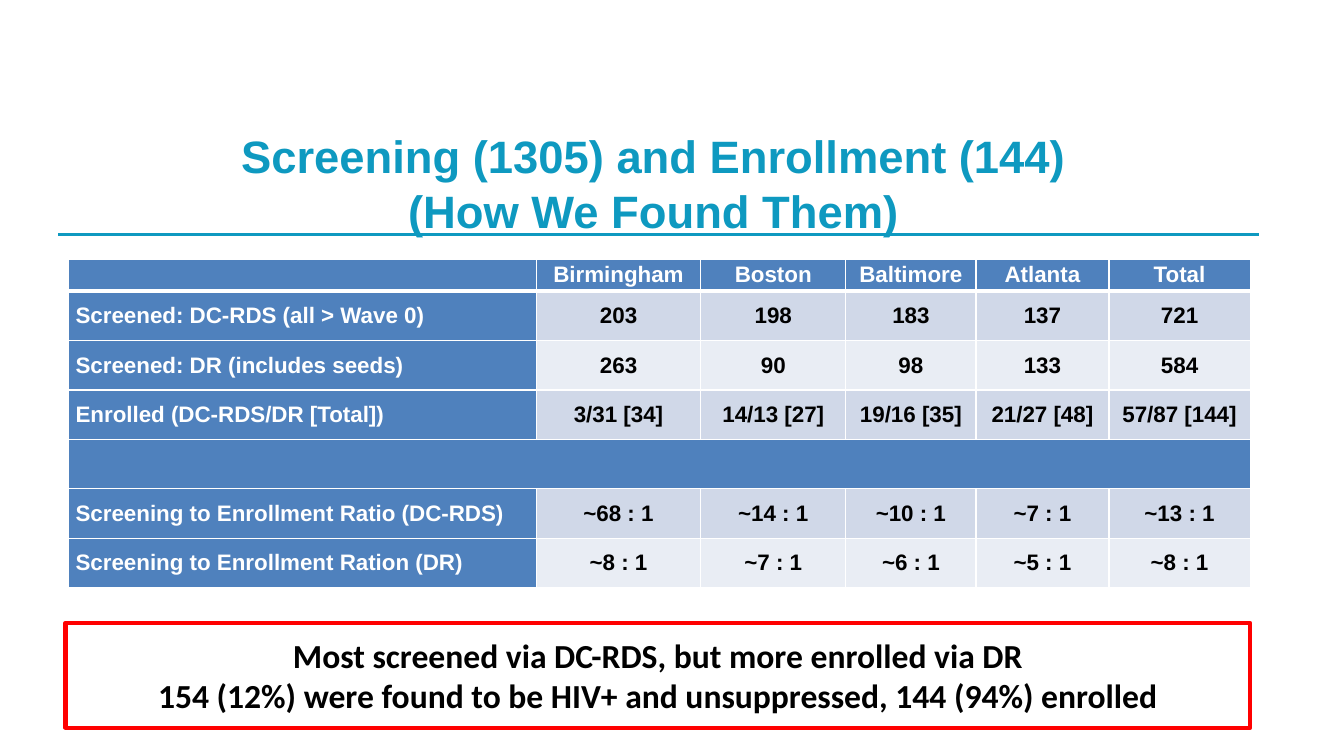
from lxml.etree import SubElement
from pptx import Presentation
from pptx.dml.color import RGBColor
from pptx.enum.shapes import MSO_CONNECTOR, MSO_SHAPE
from pptx.enum.text import MSO_ANCHOR, PP_ALIGN
from pptx.oxml.ns import qn
from pptx.util import Inches, Pt

TEAL, BLUE, WHITE, BLACK, RED = "0E99C0", "4F81BD", "FFFFFF", "000000", "FF0000"
BANDS = ("E9EDF4", "D0D8E8")

COLUMN_WIDTHS = [4.64, 1.63, 1.44, 1.29, 1.32, 1.4]
ROW_HEIGHTS = [0.32] + [0.49] * 6
SPACER_ROW = 4
SCREENING = [
    ["", "Birmingham", "Boston", "Baltimore", "Atlanta", "Total"],
    ["Screened: DC-RDS (all > Wave 0)", "203", "198", "183", "137", "721"],
    ["Screened: DR (includes seeds)", "263", "90", "98", "133", "584"],
    ["Enrolled (DC-RDS/DR [Total])", "3/31 [34]", "14/13 [27]", "19/16 [35]",
     "21/27 [48]", "57/87 [144]"],
    [""] * 6,
    ["Screening to Enrollment Ratio (DC-RDS)", "~68 : 1", "~14 : 1", "~10 : 1",
     "~7 : 1", "~13 : 1"],
    ["Screening to Enrollment Ration (DR)", "~8 : 1", "~7 : 1", "~6 : 1",
     "~5 : 1", "~8 : 1"],
]


def color(value):
    return RGBColor.from_string(value)


class SlideBuilder:
    def __init__(self, page, font="Arial"):
        self.page = page
        self.font = font

    def set_text(self, para, text, size, ink, align=PP_ALIGN.CENTER, font=None):
        para.text = text
        para.alignment = align
        para.font.name = font or self.font
        para.font.size = Pt(size)
        para.font.bold = True
        para.font.color.rgb = color(ink)

    def title(self, text, left, top, width, height):
        box = self.page.shapes.add_textbox(
            Inches(left), Inches(top), Inches(width), Inches(height))
        frame = box.text_frame
        frame.word_wrap = True
        frame.vertical_anchor = MSO_ANCHOR.MIDDLE
        frame.margin_top = frame.margin_bottom = 0
        self.set_text(frame.paragraphs[0], text, 32.4, TEAL)

    def rule(self, left, right, y):
        line = self.page.shapes.add_connector(
            MSO_CONNECTOR.STRAIGHT, Inches(left), Inches(y), Inches(right), Inches(y))
        line.line.color.rgb = color(TEAL)
        line.line.width = Pt(2)
        SubElement(line._element.spPr, qn("a:effectLst"))

    def borders(self, cell, top, bottom):
        properties = cell._tc.get_or_add_tcPr()
        for side, width in (("L", 1), ("R", 1), ("T", top), ("B", bottom)):
            edge = SubElement(properties, qn(f"a:ln{side}"), w=str(Pt(width)))
            fill = SubElement(edge, qn("a:solidFill"))
            SubElement(fill, qn("a:srgbClr"), val=WHITE)

    def table(self, rows, left, top):
        grid = self.page.shapes.add_table(
            len(rows), len(COLUMN_WIDTHS), Inches(left), Inches(top),
            Inches(sum(COLUMN_WIDTHS)), Inches(sum(ROW_HEIGHTS))).table
        for column, width in zip(grid.columns, COLUMN_WIDTHS):
            column.width = Inches(width)
        for row, height in zip(grid.rows, ROW_HEIGHTS):
            row.height = Inches(height)
        for r, texts in enumerate(rows):
            for c, text in enumerate(texts):
                cell = grid.cell(r, c)
                heading = r in (0, SPACER_ROW) or c == 0
                cell.margin_left = cell.margin_right = Inches(0.07)
                cell.margin_top = cell.margin_bottom = 0
                cell.vertical_anchor = MSO_ANCHOR.MIDDLE
                self.borders(cell, 3 if r == 1 else 1, 3 if r == 0 else 1)
                cell.fill.solid()
                cell.fill.fore_color.rgb = color(BLUE if heading else BANDS[r % 2])
                self.set_text(cell.text_frame.paragraphs[0], text, 16,
                              WHITE if heading else BLACK,
                              PP_ALIGN.LEFT if c == 0 else PP_ALIGN.CENTER)
        grid.cell(SPACER_ROW, 0).merge(grid.cell(SPACER_ROW, len(COLUMN_WIDTHS) - 1))

    def callout(self, lines, left, top, width, height):
        box = self.page.shapes.add_shape(
            MSO_SHAPE.RECTANGLE, Inches(left), Inches(top), Inches(width), Inches(height))
        box.shadow.inherit = False
        box.fill.solid()
        box.fill.fore_color.rgb = color(WHITE)
        box.line.color.rgb = color(RED)
        box.line.width = Pt(3)
        frame = box.text_frame
        frame.word_wrap = True
        frame.vertical_anchor = MSO_ANCHOR.MIDDLE
        for i, text in enumerate(lines):
            para = frame.add_paragraph() if i else frame.paragraphs[0]
            self.set_text(para, text, 24, BLACK, font="Calibri")


def main():
    deck = Presentation()
    deck.slide_width, deck.slide_height = Inches(13.33), Inches(7.5)
    slide = SlideBuilder(deck.slides.add_slide(deck.slide_layouts[6]))

    # Heading and rule
    slide.title("Screening (1305) and Enrollment (144)\v(How We Found Them)",
                0.47, 1.3, 12.02, 1.03)
    slide.rule(0.58, 12.49, 2.33)

    # Screening and enrollment by city
    slide.table(SCREENING, 0.68, 2.57)

    # Key finding
    slide.callout(["Most screened via DC-RDS, but more enrolled via DR",
                   "154 (12%) were found to be HIV+ and unsuppressed, 144 (94%) enrolled"],
                  0.65, 6.18, 11.75, 1.04)

    deck.save("out.pptx")


if __name__ == "__main__":
    main()
